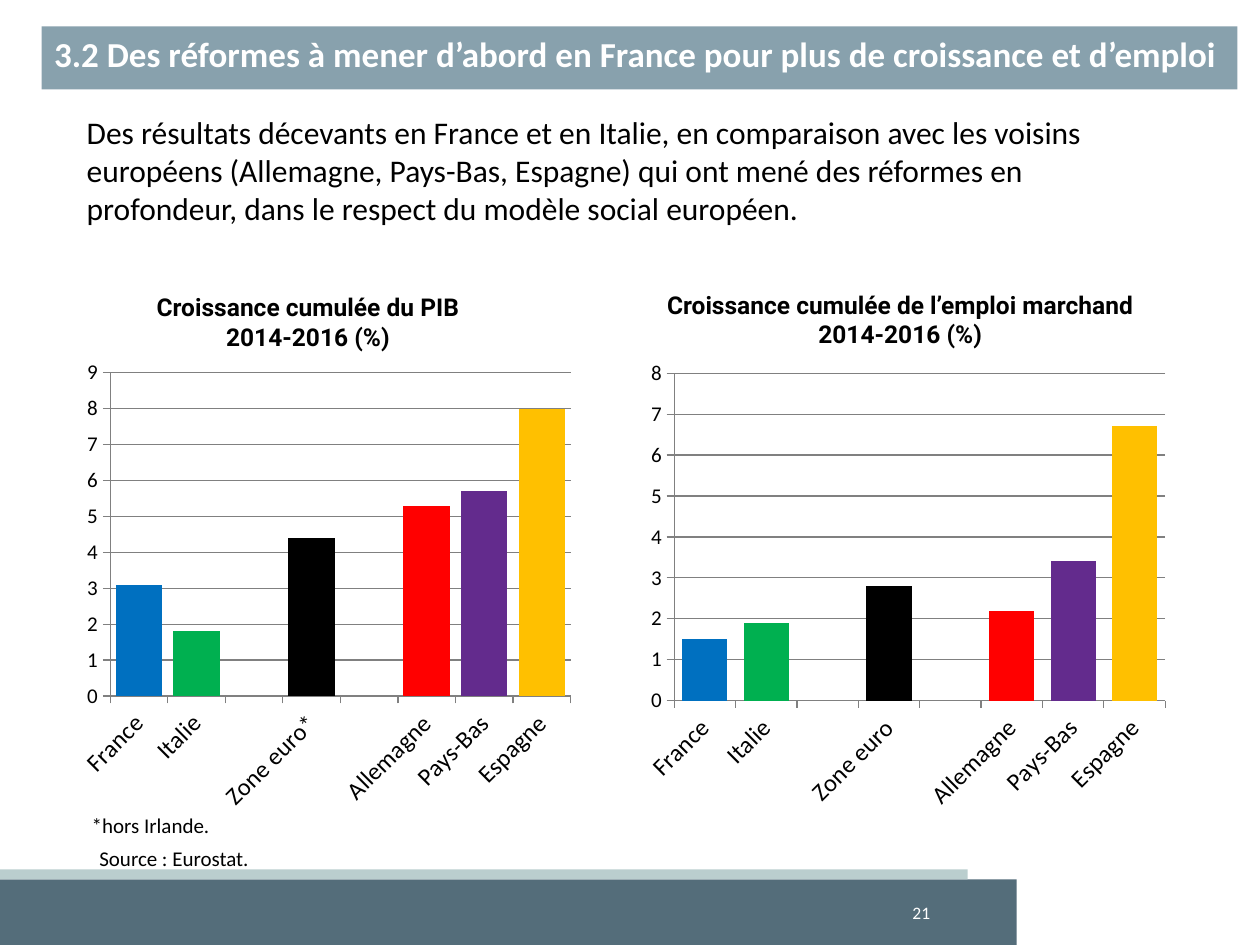
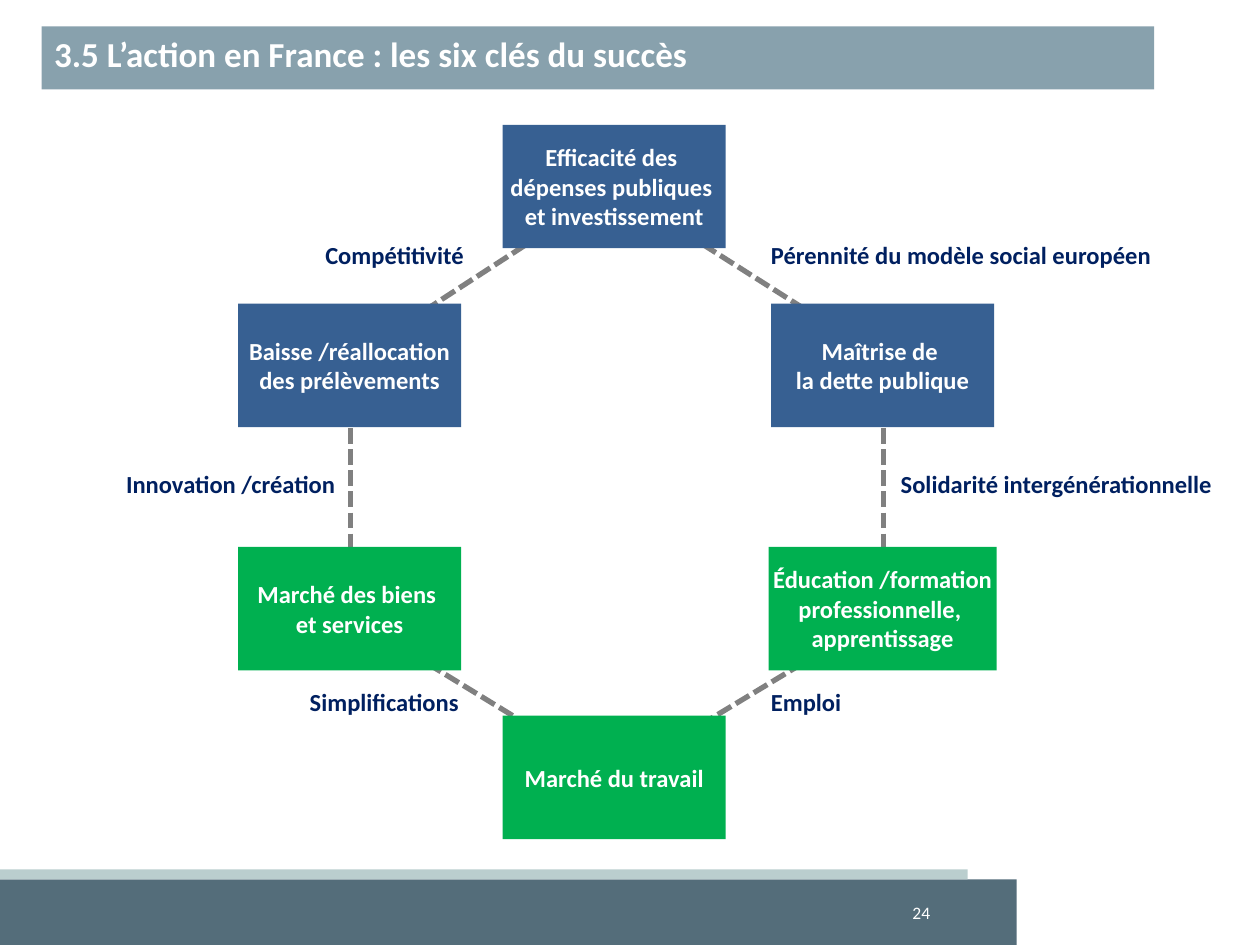
from pptx import Presentation
from pptx import util as u
from pptx.chart.data import CategoryChartData
from pptx.dml.color import RGBColor
from pptx.enum import chart as charts, dml, shapes, text
from pptx.oxml import parse_xml
from pptx.oxml.ns import nsdecls, qn

PX = u.Inches(1) // 100
COLORS = {
    "band": "88A1AD", "footer": "546D7A", "footer_edge": "BACECE",
    "white": "FFFFFF", "black": "000000", "navy": "002060",
    "grey": "808080", "public": "376092", "market": "00B050",
    "France": "0070C0", "Italie": "00B050", "Zone euro": "000000",
    "Allemagne": "FF0000", "Pays-Bas": "632B8D", "Espagne": "FFC000",
}
ALIGN = {"left": text.PP_ALIGN.LEFT, "center": text.PP_ALIGN.CENTER, "right": text.PP_ALIGN.RIGHT}
BODY = {"name": "Calibri", "size": u.Pt(18), "bold": False}
SMALL = {**BODY, "size": u.Pt(12)}
PAGE = {**BODY, "size": u.Pt(10)}
TITLE = {**BODY, "size": u.Pt(20), "bold": True}
LABEL = {**BODY, "size": u.Pt(14), "bold": True}
HEADING = {**LABEL, "name": "Roboto"}


def color(name):
    """Return the named colour."""
    return RGBColor.from_string(COLORS[name])


def emu(*lengths):
    """Turn px lengths into EMU."""
    return [length * PX for length in lengths]


def set_font(font, values, color_name):
    """Apply format values and a colour to a font."""
    for name, value in values.items():
        setattr(font, name, value)
    font.color.rgb = color(color_name)


def write(shape, words, values, color_name="black", align="left", anchor="TOP", wrap=True):
    """Fill a shape with formatted paragraphs, one for each line."""
    frame = shape.text_frame
    frame.text = words
    frame.word_wrap = wrap
    frame.auto_size = text.MSO_AUTO_SIZE.NONE
    frame.vertical_anchor = text.MSO_ANCHOR[anchor]
    for paragraph in frame.paragraphs:
        paragraph.alignment = ALIGN[align]
        set_font(paragraph.font, values, color_name)


def add_text(slide, box, words, values, *args, **options):
    """Add a formatted text box."""
    write(slide.shapes.add_textbox(*emu(*box)), words, values, *args, **options)


def add_block(slide, box, fill):
    """Add a plain filled rectangle."""
    shape = slide.shapes.add_shape(shapes.MSO_SHAPE.RECTANGLE, *emu(*box))
    shape.shadow.inherit = False
    shape.fill.solid()
    shape.fill.fore_color.rgb = color(fill)
    shape.line.fill.background()
    return shape


def add_dashed_line(slide, start, end):
    """Add a dashed grey connector."""
    line = slide.shapes.add_connector(shapes.MSO_CONNECTOR.STRAIGHT, *emu(*start, *end))
    line.line.color.rgb = color("grey")
    line.line.width = u.Pt(3)
    line.line.dash_style = dml.MSO_LINE.SQUARE_DOT
    line.element.spPr.append(parse_xml(f"<a:effectLst {nsdecls('a')}/>"))


def add_footer(slide, box, number):
    """Draw the two footer bands and the page number."""
    left, top, width, height = box
    add_block(slide, (left, top + 8, width, height - 8), "footer")
    add_block(slide, (left, top, width - 39, 8), "footer_edge")
    add_text(slide, (left + width - 167, top + 18, 108, 33), number, PAGE,
             "white", "right", "MIDDLE")


def add_slide(presentation, title, title_width, number):
    """Start a slide with its title band and footer."""
    slide = presentation.slides.add_slide(presentation.slide_layouts[5])
    band = slide.shapes.title
    band.left, band.top, band.width, band.height = emu(33, 21, title_width, 50)
    band.fill.solid()
    band.fill.fore_color.rgb = color("band")
    write(band, title, TITLE, "white")
    add_footer(slide, (0, 690, 807, 60), number)
    return slide


def set_plot_area(chart, fractions):
    """Fix the inner plot area as fractions of the chart."""
    parts = "".join(f'<c:{name} val="{value}"/>' for name, value in zip("xywh", fractions))
    area = chart.element.find(f".//{qn('c:plotArea')}")
    for layout in area.findall(qn("c:layout")):
        area.remove(layout)
    area.insert(0, parse_xml(
        f'<c:layout {nsdecls("c")}><c:manualLayout><c:layoutTarget val="inner"/>'
        f'<c:xMode val="edge"/><c:yMode val="edge"/>{parts}</c:manualLayout></c:layout>'))


def add_growth_chart(slide, box, growth, maximum, gap, plot_area):
    """Add a column chart with one colour for each country."""
    data = CategoryChartData()
    data.categories = [country for country, _ in growth]
    data.add_series("Series 1", [value for _, value in growth])
    chart = slide.shapes.add_chart(
        charts.XL_CHART_TYPE.COLUMN_CLUSTERED, *emu(*box), data).chart
    chart.has_legend = chart.has_title = False
    set_font(chart.font, PAGE, "black")
    plot = chart.plots[0]
    plot.gap_width, plot.overlap, plot.vary_by_categories = gap, -30, False
    series = plot.series[0]
    series.invert_if_negative = False
    for index, (country, _) in enumerate(growth):
        if country:
            fill = series.points[index].format.fill
            fill.solid()
            fill.fore_color.rgb = color(country.rstrip("*"))
    for axis, size in ((chart.category_axis, 14), (chart.value_axis, 12)):
        axis.major_tick_mark = charts.XL_TICK_MARK.OUTSIDE
        axis.format.line.color.rgb = color("grey")
        set_font(axis.tick_labels.font, {**BODY, "size": u.Pt(size)}, "black")
    chart.element.xpath(".//c:catAx/c:txPr/a:bodyPr")[0].set("rot", "-2700000")
    axis = chart.value_axis
    axis.minimum_scale, axis.maximum_scale, axis.major_unit = 0, maximum, 1
    axis.major_gridlines.format.line.color.rgb = color("grey")
    axis.tick_labels.number_format = "0"
    axis.tick_labels.number_format_is_linked = False
    set_plot_area(chart, plot_area)


def add_chart_panel(slide, box, heading, heading_height, margins, **chart_options):
    """Place a heading and, beneath it, a chart within side margins."""
    left, top, width, height = box
    before, after = margins
    add_text(slide, (left, top, width, heading_height), heading, HEADING, align="center")
    add_growth_chart(slide, (left + before, top + heading_height, width - before - after,
                             height - heading_height), **chart_options)


def add_key_ring(slide, box):
    """Draw the six linked keys and the labels of their links."""
    left, top = box[:2]
    lines = [
        ((709, 384), (487, 518)), ((268, 384), (487, 518)),
        ((709, 191), (487, 50)), ((487, 50), (270, 191)),
        ((278, 241), (278, 335)), ((701, 241), (701, 335)),
    ]
    keys = [
        (399, 469, 177, "market", "Marché du travail"),
        (399, 0, 177, "public", "Efficacité des \ndépenses publiques \net investissement"),
        (189, 142, 177, "public", "Baisse /réallocation\ndes prélèvements"),
        (612, 142, 177, "public", "Maîtrise de \nla dette publique"),
        (189, 335, 177, "market", "Marché des biens \net services"),
        (610, 335, 181, "market", "Éducation /formation\nprofessionnelle, \napprentissage"),
    ]
    labels = [
        (602, 441, 110, "left", "Emploi"),
        (193, 441, 181, "right", "Simplifications"),
        (76, 268, 200, "right", "Innovation /création"),
        (705, 268, 295, "left", "Solidarité intergénérationnelle"),
        (177, 87, 201, "right", "Compétitivité"),
        (602, 87, 370, "left", "Pérennité du modèle social européen"),
    ]
    for ends in lines:
        add_dashed_line(slide, *[(left + x, top + y) for x, y in ends])
    for x, y, width, fill, words in keys:
        shape = add_block(slide, (left + x, top + y, width, 98), fill)
        write(shape, words, LABEL, "white", "center", "MIDDLE", wrap=False)
    for x, y, width, align, words in labels:
        add_text(slide, (left + x, top + y, width, 34), words, LABEL, "navy", align)


def build_results_slide(presentation):
    """Build the slide that compares growth and employment."""
    slide = add_slide(
        presentation,
        "3.2 Des réformes à mener d’abord en France pour plus de croissance et d’emploi",
        949, "21")
    add_text(slide, (59, 85, 850, 101),
             "Des résultats décevants en France et en Italie, en comparaison avec les voisins "
             "européens (Allemagne, Pays-Bas, Espagne) qui ont mené des réformes en profondeur, "
             "dans le respect du modèle social européen.", BODY)
    add_chart_panel(
        slide, (28, 227, 433, 426), "Croissance cumulée du PIB\n2014-2016 (%)", 54, (27, 0),
        growth=[("France", 3.1), ("Italie", 1.8), ("", None), ("Zone euro*", 4.4), ("", None),
                ("Allemagne", 5.3), ("Pays-Bas", 5.7), ("Espagne", 8)],
        maximum=9, gap=24, plot_area=(0.08, 0.04, 0.9, 0.69))
    add_chart_panel(
        slide, (480, 225, 469, 457),
        "Croissance cumulée de l’emploi marchand\n2014-2016 (%)", 51, (20, 11),
        growth=[("France", 1.5), ("Italie", 1.9), ("", None), ("Zone euro", 2.8), ("", None),
                ("Allemagne", 2.2), ("Pays-Bas", 3.4), ("Espagne", 6.7)],
        maximum=8, gap=36, plot_area=(0.08, 0.05, 0.89, 0.64))
    add_text(slide, (63, 640, 283, 30), "*hors Irlande.", SMALL)
    add_text(slide, (69, 666, 177, 48), "Source : Eurostat.", SMALL)


def build_keys_slide(presentation):
    """Build the slide of the six keys to success."""
    slide = add_slide(presentation, "3.5 L’action en France : les six clés du succès", 883, "24")
    add_key_ring(slide, (0, 99, 1000, 567))


def main():
    """Build and save the presentation."""
    presentation = Presentation()
    presentation.slide_width, presentation.slide_height = emu(1000, 750)
    build_results_slide(presentation)
    build_keys_slide(presentation)
    presentation.save("out.pptx")


if __name__ == "__main__":
    main()
